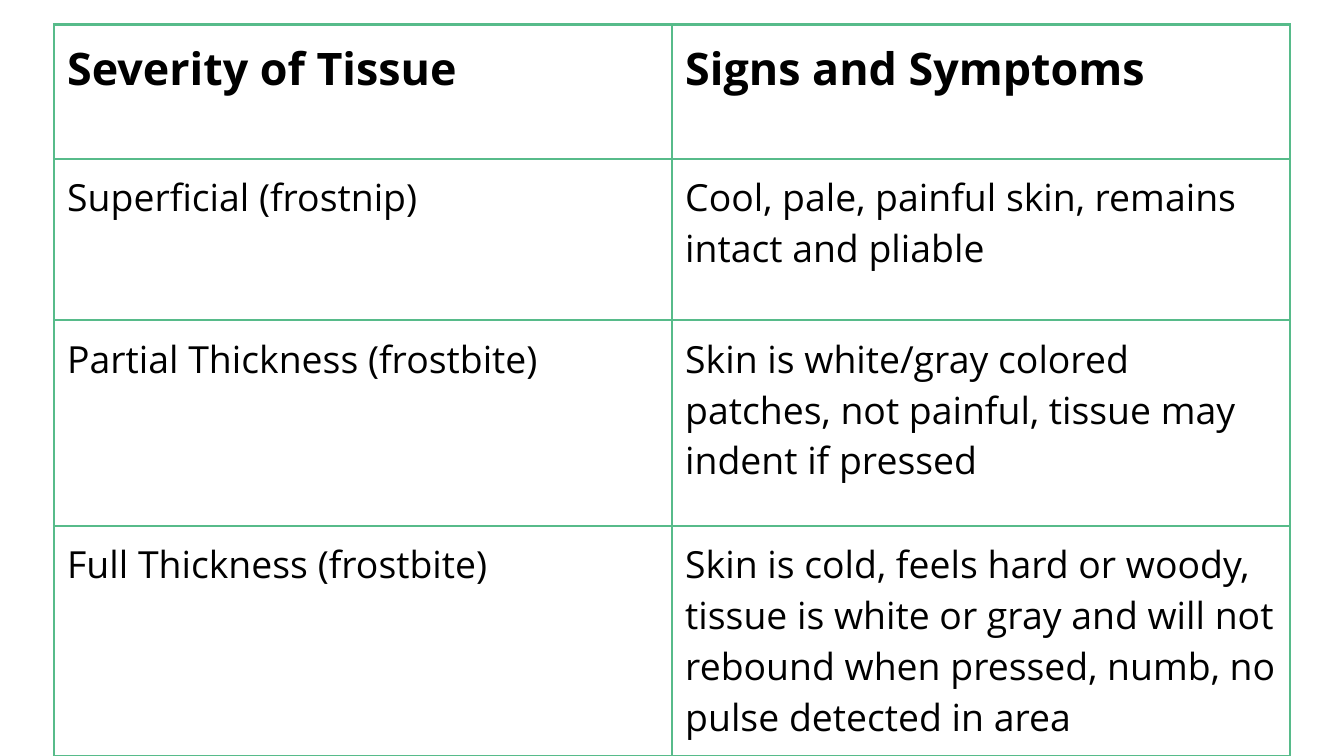
from lxml.etree import SubElement
from pptx import Presentation
from pptx.dml.color import RGBColor
from pptx.enum.text import MSO_ANCHOR
from pptx.oxml.ns import qn
from pptx.util import Cm, Pt

ROWS = [
    ("Severity of Tissue", "Signs and Symptoms"),
    ("Superficial (frostnip)",
     "Cool, pale, painful skin, remains intact and pliable"),
    ("Partial Thickness (frostbite)",
     "Skin is white/gray colored patches, not painful, tissue may indent if pressed"),
    ("Full Thickness (frostbite)",
     "Skin is cold, feels hard or woody, tissue is white or gray and will not "
     "rebound when pressed, numb, no pulse detected in area"),
]
ROW_HEIGHTS = [2.54, 3.05, 3.89, 3.89]
COLUMN_WIDTHS = [11.68, 11.68]


def color(hex_string):
    return RGBColor.from_string(hex_string)


def write_text(text_frame, text, size=20, bold=False, font="Open Sans", fill="000000"):
    run = text_frame.paragraphs[0].add_run()
    run.text = text
    run.font.name = font
    run.font.size = Pt(size)
    run.font.bold = bold
    run.font.color.rgb = color(fill)


class SlideBuilder:
    border_color = "57BB8A"
    border_width = Pt(1.5)
    padding = Cm(0.25)

    def __init__(self, slide):
        self.slide = slide

    def add_borders(self, cell):
        # Border lines must come before the fill in the cell properties
        properties = cell._tc.get_or_add_tcPr()
        for side in ("a:lnL", "a:lnR", "a:lnT", "a:lnB"):
            line = SubElement(properties, qn(side), w=str(self.border_width))
            solid_fill = SubElement(line, qn("a:solidFill"))
            SubElement(solid_fill, qn("a:srgbClr"), val=self.border_color)

    def add_cell(self, cell, text, **text_format):
        cell.margin_left = cell.margin_right = self.padding
        cell.margin_top = cell.margin_bottom = self.padding
        cell.vertical_anchor = MSO_ANCHOR.TOP
        self.add_borders(cell)
        cell.fill.background()
        write_text(cell.text_frame, text, **text_format)

    def add_table(self, left, top, rows, column_widths, row_heights):
        table = self.slide.shapes.add_table(
            len(rows), len(column_widths), Cm(left), Cm(top),
            Cm(sum(column_widths)), Cm(sum(row_heights))).table
        table.first_row = table.horz_banding = False
        for column, width in zip(table.columns, column_widths):
            column.width = Cm(width)
        for row, height in zip(table.rows, row_heights):
            row.height = Cm(height)
        for row_index, texts in enumerate(rows):
            is_header = row_index == 0
            for column_index, text in enumerate(texts):
                self.add_cell(table.cell(row_index, column_index), text,
                              size=24 if is_header else 20, bold=is_header)


def main():
    presentation = Presentation()
    presentation.slide_width = Cm(25.4)
    presentation.slide_height = Cm(14.29)
    slide = presentation.slides.add_slide(presentation.slide_layouts[6])

    # Frostbite severity table
    builder = SlideBuilder(slide)
    builder.add_table(1.02, 0.46, ROWS, COLUMN_WIDTHS, ROW_HEIGHTS)

    presentation.save("out.pptx")


if __name__ == "__main__":
    main()
